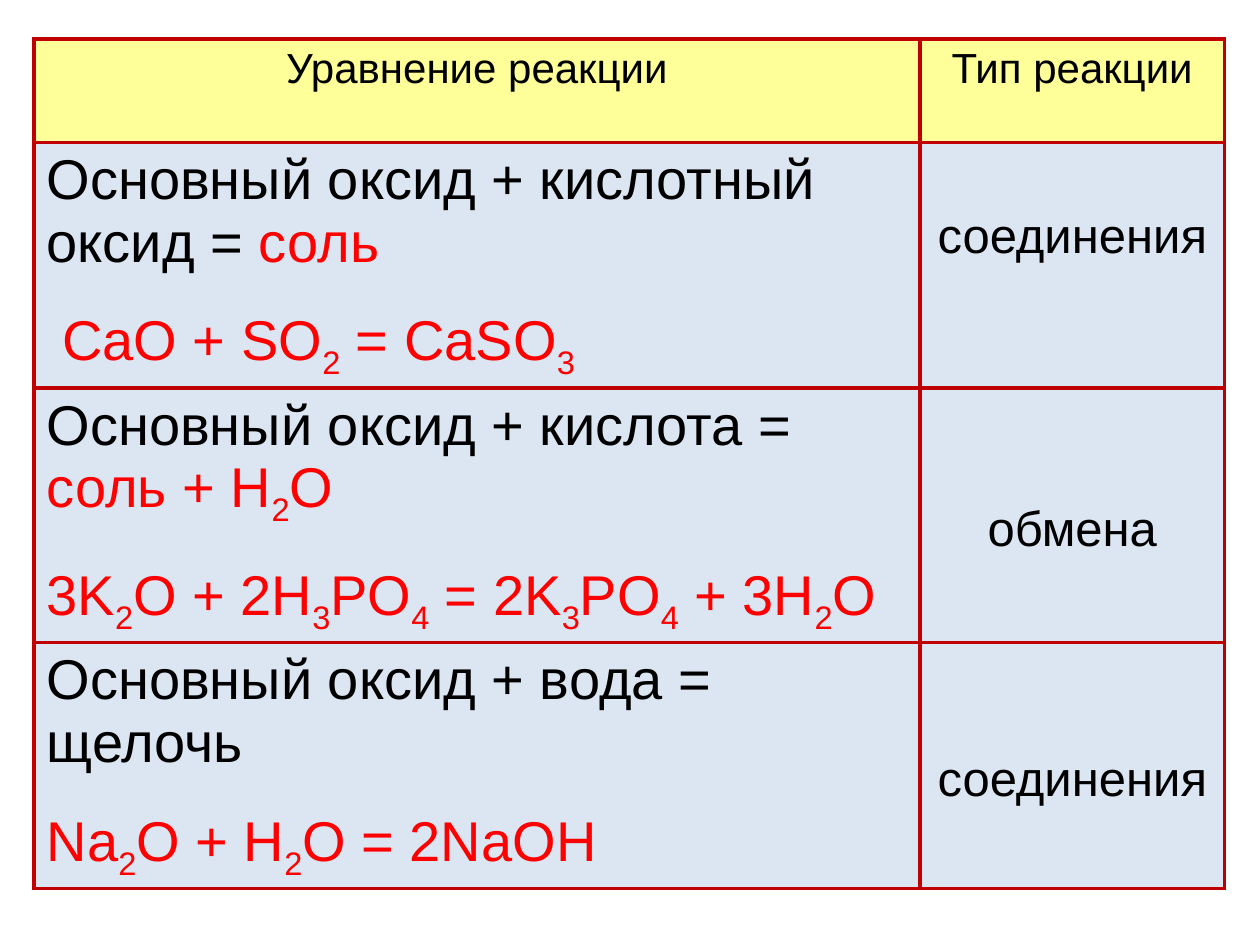
from dataclasses import dataclass

import lxml.etree
import pptx
import pptx.dml.color
import pptx.enum.text
import pptx.oxml.ns
import pptx.util

Inches = pptx.util.Inches
Pt = pptx.util.Pt
Color = pptx.dml.color.RGBColor.from_string
qn = pptx.oxml.ns.qn
Align = pptx.enum.text.PP_ALIGN
Anchor = pptx.enum.text.MSO_ANCHOR


@dataclass(frozen=True)
class Theme:
    font: str = "Arial"
    text: str = "000000"
    accent: str = "FF0000"
    border: str = "C00000"
    header_fill: str = "FFFF99"
    body_fill: str = "DCE6F2"
    header_size: int = 24
    equation_size: int = 32
    kind_size: int = 28
    border_width: float = 2.25
    equation_spacing: float = 1.5
    subscript: int = -25000


COLUMN_WIDTHS = [7.03, 2.42]
ROW_HEIGHTS = [0.82, 1.95, 2.02, 1.95]
HEADERS = ["Уравнение реакции", "Тип реакции"]
REACTIONS = [
    {
        "scheme": "Основный оксид + кислотный оксид = ",
        "product": "соль",
        "equation": " CaO + SO_2 = CaSO_3",
        "kind": "соединения",
        "bottom": 0.72,
    },
    {
        "scheme": "Основный оксид + кислота = ",
        "product": "соль + H_2O",
        "equation": "3K_2O + 2H_3PO_4 = 2K_3PO_4 + 3H_2O",
        "kind": "обмена",
        "bottom": 0.05,
    },
    {
        "scheme": "Основный оксид + вода = щелочь",
        "product": "",
        "equation": "Na_2O + H_2O = 2NaOH",
        "kind": "соединения",
        "bottom": 0.05,
    },
]


def apply(target, values):
    for name, value in values.items():
        setattr(target, name, value)


class SlideBuilder:
    def __init__(self, presentation, theme):
        self.theme = theme
        self.slide = presentation.slides.add_slide(presentation.slide_layouts[6])

    def table(self, left, top, widths, heights):
        table = self.slide.shapes.add_table(
            len(heights), len(widths), Inches(left), Inches(top),
            Inches(sum(widths)), Inches(sum(heights)),
        ).table
        apply(table, {"first_row": False, "horz_banding": False})
        for column, width in zip(table.columns, widths):
            column.width = Inches(width)
        for row, height in zip(table.rows, heights):
            row.height = Inches(height)
        return table

    def style_cell(self, cell, fill, **formats):
        properties = cell._tc.get_or_add_tcPr()
        for edge in ("lnL", "lnR", "lnT", "lnB"):
            line = lxml.etree.SubElement(properties, qn(f"a:{edge}"))
            line.set("w", str(Pt(self.theme.border_width)))
            solid = lxml.etree.SubElement(line, qn("a:solidFill"))
            color = lxml.etree.SubElement(solid, qn("a:srgbClr"))
            color.set("val", self.theme.border)
        cell.fill.solid()
        cell.fill.fore_color.rgb = Color(fill)
        apply(cell, formats)

    def run(self, paragraph, text, size, color, subscript=False):
        run = paragraph.add_run()
        run.text = text
        apply(run.font, {"name": self.theme.font, "size": Pt(size)})
        run.font.color.rgb = Color(color)
        if subscript:
            run.font._element.set("baseline", str(self.theme.subscript))

    def formula(self, paragraph, text, size, color):
        first, *others = text.split("_")
        pieces = [(first, False)]
        for part in others:
            pieces += [(part[0], True), (part[1:], False)]
        for piece, subscript in pieces:
            if piece:
                self.run(paragraph, piece, size, color, subscript)

    def header(self, cell, text):
        self.style_cell(cell, self.theme.header_fill)
        paragraph = cell.text_frame.paragraphs[0]
        paragraph.alignment = Align.CENTER
        self.run(paragraph, text, self.theme.header_size, self.theme.text)

    def reaction(self, cell, scheme, product, equation):
        theme = self.theme
        self.style_cell(cell, theme.body_fill)
        paragraph = cell.text_frame.paragraphs[0]
        self.run(paragraph, scheme, theme.equation_size, theme.text)
        self.formula(paragraph, product, theme.equation_size, theme.accent)
        paragraph = cell.text_frame.add_paragraph()
        paragraph.line_spacing = theme.equation_spacing
        self.formula(paragraph, equation, theme.equation_size, theme.accent)

    def kind(self, cell, text, bottom):
        theme = self.theme
        self.style_cell(cell, theme.body_fill, vertical_anchor=Anchor.MIDDLE,
                        margin_bottom=Inches(bottom))
        paragraph = cell.text_frame.paragraphs[0]
        apply(paragraph, {"alignment": Align.CENTER,
                          "line_spacing": theme.equation_spacing})
        self.run(paragraph, text, theme.kind_size, theme.text)


def main():
    presentation = pptx.Presentation()
    apply(presentation, {"slide_width": Inches(10), "slide_height": Inches(7.5)})
    builder = SlideBuilder(presentation, Theme())
    table = builder.table(0.27, 0.31, COLUMN_WIDTHS, ROW_HEIGHTS)
    for column, text in enumerate(HEADERS):
        builder.header(table.cell(0, column), text)
    for row, item in enumerate(REACTIONS, start=1):
        builder.reaction(table.cell(row, 0), item["scheme"], item["product"],
                         item["equation"])
        builder.kind(table.cell(row, 1), item["kind"], item["bottom"])
    presentation.save("out.pptx")


if __name__ == "__main__":
    main()
